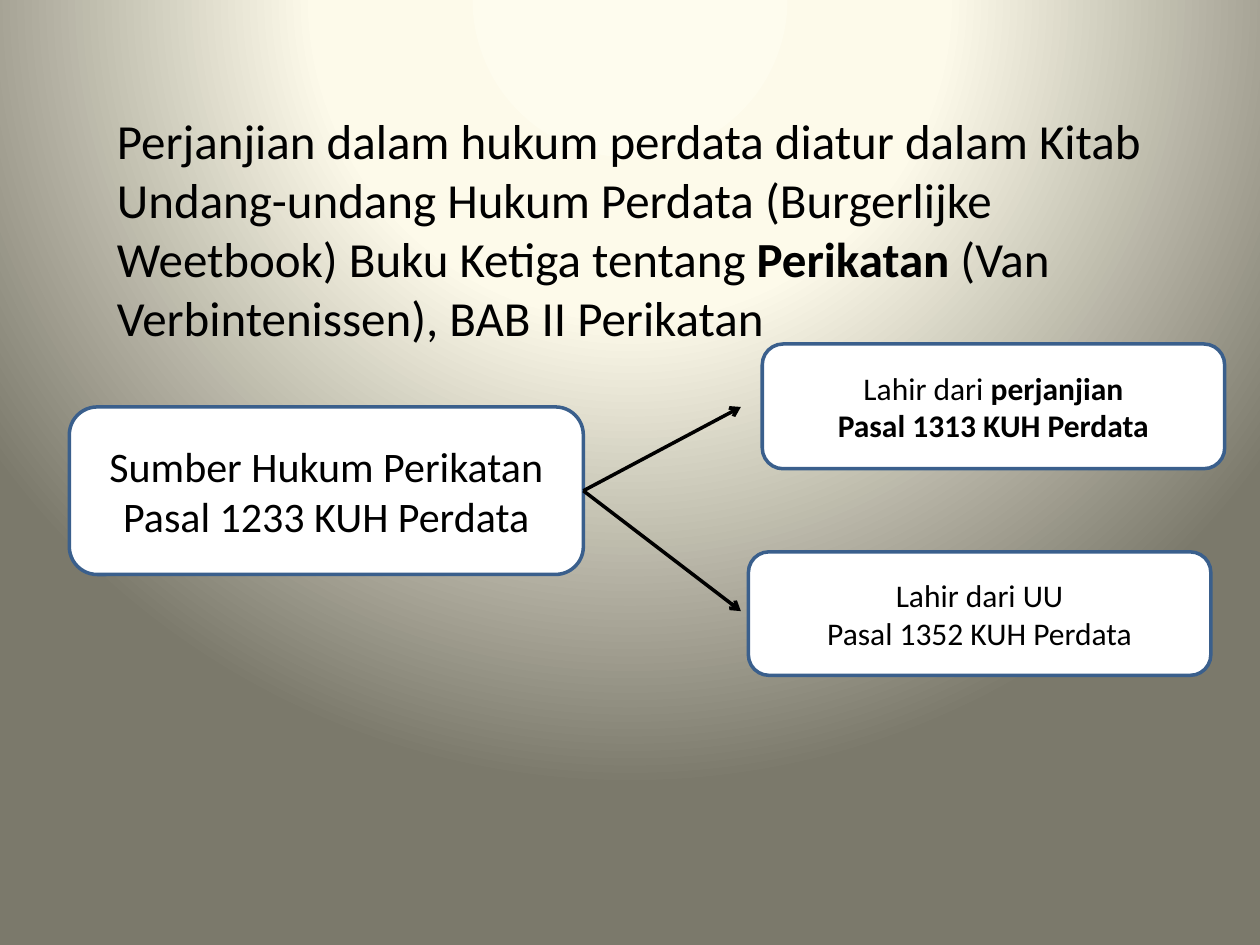
from pptx import Presentation
from pptx.dml.color import RGBColor
from pptx.enum.shapes import MSO_CONNECTOR, MSO_SHAPE
from pptx.enum.text import MSO_ANCHOR, MSO_AUTO_SIZE, PP_ALIGN
from pptx.oxml import parse_xml
from pptx.oxml.ns import nsdecls
from pptx.util import Inches, Pt

BLACK = RGBColor(0x00, 0x00, 0x00)
WHITE = RGBColor(0xFF, 0xFF, 0xFF)
BLUE = RGBColor(0x3A, 0x5F, 0x8C)
FONT = "Calibri"
RIGHT_SIDE = 3

# Content: each paragraph is a list of (text, bold) pieces
INTRO = [[
    ("Perjanjian dalam hukum perdata diatur dalam Kitab Undang-undang Hukum "
     "Perdata (Burgerlijke Weetbook) Buku Ketiga tentang ", False),
    ("Perikatan", True),
    (" (Van Verbintenissen), BAB II Perikatan", False),
]]
SOURCE_OF_LAW = [[("Sumber Hukum Perikatan", False)],
                 [("Pasal 1233 KUH Perdata", False)]]
BY_AGREEMENT = [[("Lahir dari ", False), ("perjanjian", True)],
                [("Pasal 1313 KUH Perdata", True)]]
BY_STATUTE = [[("Lahir dari UU", False)],
              [("Pasal 1352 KUH Perdata", False)]]

# Places: left, top, width, height
INTRO_AREA = (0.83, 0.83, 8.58, 1.99)
SOURCE_AREA = (0.55, 3.23, 4.08, 1.33)
BRANCHES = [(BY_STATUTE, (5.94, 4.38, 3.67, 0.98)),
            (BY_AGREEMENT, (6.05, 2.73, 3.67, 0.99))]
ARROW_TIPS = [(5.88, 3.23), (5.88, 4.85)]

# Background gradient: position in percent, colour
GLOW = [(0, "FEFCEE"), (40, "FDFAEA"), (100, "7B796B")]


def paint_background(slide):
    stops = "".join(
        f'<a:gs pos="{position * 1000}"><a:srgbClr val="{colour}"/></a:gs>'
        for position, colour in GLOW)
    slide.element.cSld.insert(0, parse_xml(
        f'<p:bg {nsdecls("p", "a")}><p:bgPr><a:gradFill rotWithShape="1">'
        f'<a:gsLst>{stops}</a:gsLst><a:path path="circle">'
        '<a:fillToRect l="50000" t="-80000" r="50000" b="180000"/></a:path>'
        '</a:gradFill><a:effectLst/></p:bgPr></p:bg>'))


def write(frame, paragraphs, size, align):
    frame.word_wrap = True
    for number, pieces in enumerate(paragraphs):
        paragraph = frame.add_paragraph() if number else frame.paragraphs[0]
        paragraph.alignment = align
        for text, bold in pieces:
            run = paragraph.add_run()
            run.text = text
            run.font.name = FONT
            run.font.size = Pt(size)
            run.font.bold = bold
            run.font.color.rgb = BLACK


def add_box(slide, paragraphs, area, size):
    box = slide.shapes.add_shape(MSO_SHAPE.ROUNDED_RECTANGLE, *map(Inches, area))
    box.shadow.inherit = False
    box.fill.solid()
    box.fill.fore_color.rgb = WHITE
    box.line.color.rgb = BLUE
    box.line.width = Pt(2)
    box.text_frame.vertical_anchor = MSO_ANCHOR.MIDDLE
    write(box.text_frame, paragraphs, size, PP_ALIGN.CENTER)
    return box


def add_arrow(slide, start_box, tip):
    x, y = map(Inches, tip)
    arrow = slide.shapes.add_connector(MSO_CONNECTOR.STRAIGHT, x, y, x, y)
    arrow.begin_connect(start_box, RIGHT_SIDE)
    arrow.line.color.rgb = BLACK
    arrow.line.width = Pt(2)
    arrow.line._get_or_add_ln().append(
        parse_xml(f'<a:tailEnd {nsdecls("a")} type="arrow"/>'))
    arrow._element.spPr.append(parse_xml(f'<a:effectLst {nsdecls("a")}/>'))


def main():
    deck = Presentation()
    deck.slide_width, deck.slide_height = Inches(10), Inches(7.5)
    slide = deck.slides.add_slide(deck.slide_layouts[6])
    paint_background(slide)

    # Source of law and its two branches
    source_box = add_box(slide, SOURCE_OF_LAW, SOURCE_AREA, 24)
    for paragraphs, area in BRANCHES:
        add_box(slide, paragraphs, area, 18)
    for tip in ARROW_TIPS:
        add_arrow(slide, source_box, tip)

    # Introduction
    intro = slide.shapes.add_textbox(*map(Inches, INTRO_AREA))
    write(intro.text_frame, INTRO, 28, PP_ALIGN.LEFT)
    intro.text_frame.auto_size = MSO_AUTO_SIZE.SHAPE_TO_FIT_TEXT

    deck.save("out.pptx")


if __name__ == "__main__":
    main()
